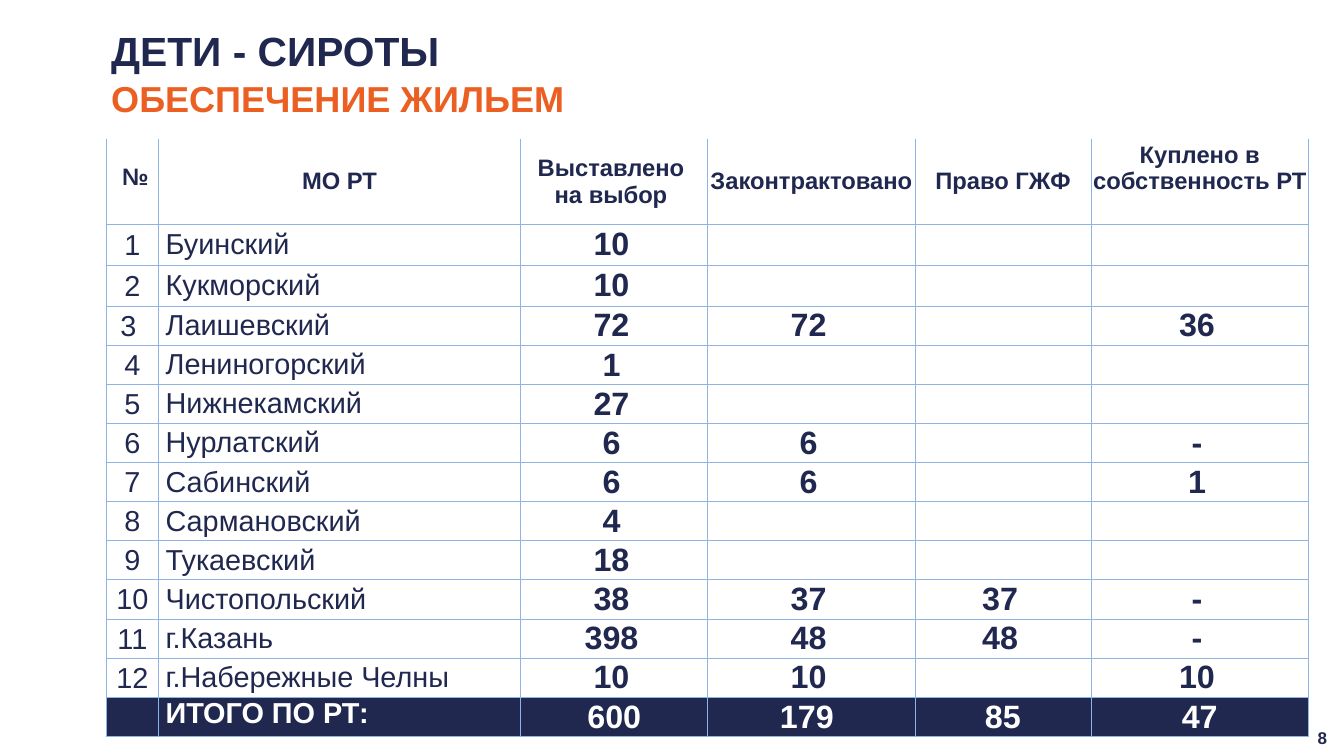
from lxml import etree
from pptx import Presentation
from pptx.dml.color import RGBColor
from pptx.enum.shapes import MSO_SHAPE
from pptx.enum.text import MSO_ANCHOR, MSO_AUTO_SIZE, PP_ALIGN
from pptx.oxml.ns import qn
from pptx.util import Inches, Pt

LEFT, CENTER = PP_ALIGN.LEFT, PP_ALIGN.CENTER
TOP, MIDDLE = MSO_ANCHOR.TOP, MSO_ANCHOR.MIDDLE
NO_AUTOFIT = MSO_AUTO_SIZE.NONE
ROUNDED = MSO_SHAPE.ROUNDED_RECTANGLE

NAVY = RGBColor(0x21, 0x28, 0x50)
ORANGE = RGBColor(0xEB, 0x60, 0x22)
WHITE = RGBColor(0xFF, 0xFF, 0xFF)
BORDER = RGBColor(0x8E, 0xB4, 0xE3)
FONT = "Arial"

COL_WIDTHS = [0.85, 5.93, 3.06, 3.39, 2.88, 3.56]
ROW_HEIGHTS = [1.4, 0.67, 0.67] + [0.64] * 11
HEADERS = ["№", "МО РТ", "Выставлено \nна выбор ", "Законтрактовано",
           "Право ГЖФ", "Куплено в собственность РТ"]
DISTRICTS = [
    ["1", "Буинский", "10", "", "", ""],
    ["2", "Кукморский", "10", "", "", ""],
    ["3 ", "Лаишевский", "72", "72", "", "36"],
    ["4", "Лениногорский", "1", "", "", ""],
    ["5", "Нижнекамский", "27", "", "", ""],
    ["6", "Нурлатский", "6", "6", "", "-"],
    ["7", "Сабинский", "6", "6", "", "1"],
    ["8", "Сармановский", "4", "", "", ""],
    ["9", "Тукаевский", "18", "", "", ""],
    ["10", "Чистопольский", "38", "37", "37", "-"],
    ["11", "г.Казань", "398", "48", "48", "-"],
    ["12", "г.Набережные Челны", "10", "10", "", "10"],
]
TOTALS = ["", "ИТОГО ПО РТ:", "600", "179 ", "85", "47"]


def format_paragraph(p, size, color, bold=True, align=LEFT):
    """Align a paragraph and format its runs."""
    p.alignment = align
    for r in p.runs:
        r.font.name = FONT
        r.font.size = Pt(size)
        r.font.bold = bold
        r.font.color.rgb = color


def set_margins(box, left=0, top=0, right=0, bottom=0):
    """Set the inner margins of a cell or text frame in inches."""
    box.margin_left, box.margin_top = Inches(left), Inches(top)
    box.margin_right, box.margin_bottom = Inches(right), Inches(bottom)


def set_borders(cell, top=True):
    """Draw thin blue borders round a cell, with or without the top one."""
    tcPr = cell._tc.get_or_add_tcPr()
    for i, side in enumerate("LRTB"):
        ln = etree.Element(qn(f"a:ln{side}"), w=str(Pt(1)))
        if side == "T" and not top:
            etree.SubElement(ln, qn("a:noFill"))
        else:
            fill = etree.SubElement(ln, qn("a:solidFill"))
            etree.SubElement(fill, qn("a:srgbClr"), val=str(BORDER))
        tcPr.insert(i, ln)


def fill_cell(cell, text, size, color=NAVY, bold=True, align=CENTER, fill=None):
    """Write one table cell with its fill and formatting."""
    cell.text = text
    cell.vertical_anchor = MIDDLE
    set_margins(cell)
    if fill is None:
        cell.fill.background()
    else:
        cell.fill.solid()
        cell.fill.fore_color.rgb = fill
    for p in cell.text_frame.paragraphs:
        format_paragraph(p, size, color, bold, align)


def add_heading(slide, x, y, w, h):
    """Fill the title placeholder with the heading and its subheading."""
    title = slide.shapes.title
    title.left, title.top, title.width, title.height = map(Inches, (x, y, w, h))
    tf = title.text_frame
    tf.text = "ДЕТИ - СИРОТЫ\nОБЕСПЕЧЕНИЕ ЖИЛЬЕМ"
    tf.auto_size = NO_AUTOFIT
    tf.vertical_anchor = TOP
    set_margins(tf, 0.08, 0.07, 0.06, 0.06)
    heading, subheading = tf.paragraphs
    format_paragraph(heading, 48, NAVY)
    format_paragraph(subheading, 42.5, ORANGE)
    subheading.space_before = Pt(2.5)


def add_housing_table(slide, x, y, w, h):
    """Place the table of housing by district."""
    frame = slide.shapes.add_table(len(ROW_HEIGHTS), len(COL_WIDTHS),
                                   *map(Inches, (x, y, w, h)))
    table = frame.table
    table.first_row = table.horz_banding = False
    for column, width in zip(table.columns, COL_WIDTHS):
        column.width = Inches(width)
    for row, height in zip(table.rows, ROW_HEIGHTS):
        row.height = Inches(height)

    for j, text in enumerate(HEADERS):
        fill_cell(table.cell(0, j), text, 28)
    number, ownership = table.cell(0, 0), table.cell(0, 5)
    number.margin_left = Inches(0.1)
    number.text_frame.paragraphs[0].line_spacing = Pt(21.2)
    ownership.vertical_anchor = TOP
    ownership.margin_top = Inches(0.05)

    for i, values in enumerate(DISTRICTS, 1):
        for j, text in enumerate(values):
            cell = table.cell(i, j)
            fill_cell(cell, text, 34 if j < 2 else 38,
                      bold=j > 1, align=LEFT if j == 1 else CENTER)
            if j > 1:
                cell.margin_right = Inches(0.09)
        set_margins(table.cell(i, 0), 0.02, 0.02, 0.02)
        table.cell(i, 1).margin_left = Inches(0.12)

    last = len(ROW_HEIGHTS) - 1
    for j, text in enumerate(TOTALS):
        fill_cell(table.cell(last, j), text, 34 if j < 2 else 38, WHITE,
                  align=LEFT if j == 1 else CENTER, fill=NAVY)
        set_margins(table.cell(last, j), 0.01, 0.01, 0.01)
    total = table.cell(last, 1)
    total.vertical_anchor = TOP
    set_margins(total, 0.12)

    for i, row in enumerate(table.rows):
        for cell in row.cells:
            set_borders(cell, top=i > 0)


def add_page_number(slide, x, y, w, h):
    """Place the page number in the corner."""
    sp = slide.shapes.add_shape(ROUNDED, *map(Inches, (x, y, w, h)))
    sp.shadow.inherit = False
    sp.fill.background()
    sp.line.fill.background()
    tf = sp.text_frame
    tf.text = "8"
    tf.vertical_anchor = MIDDLE
    format_paragraph(tf.paragraphs[0], 20, NAVY, align=CENTER)


def main():
    """Build and save the slide."""
    prs = Presentation()
    prs.slide_width, prs.slide_height = Inches(21.99), Inches(12.37)
    slide = prs.slides.add_slide(prs.slide_layouts[5])
    add_page_number(slide, 21.28, 11.77, 0.71, 0.59)
    add_heading(slide, 1.74, 0.35, 17.71, 1.68)
    add_housing_table(slide, 1.74, 2.27, sum(COL_WIDTHS), sum(ROW_HEIGHTS))
    prs.save("out.pptx")


if __name__ == "__main__":
    main()
